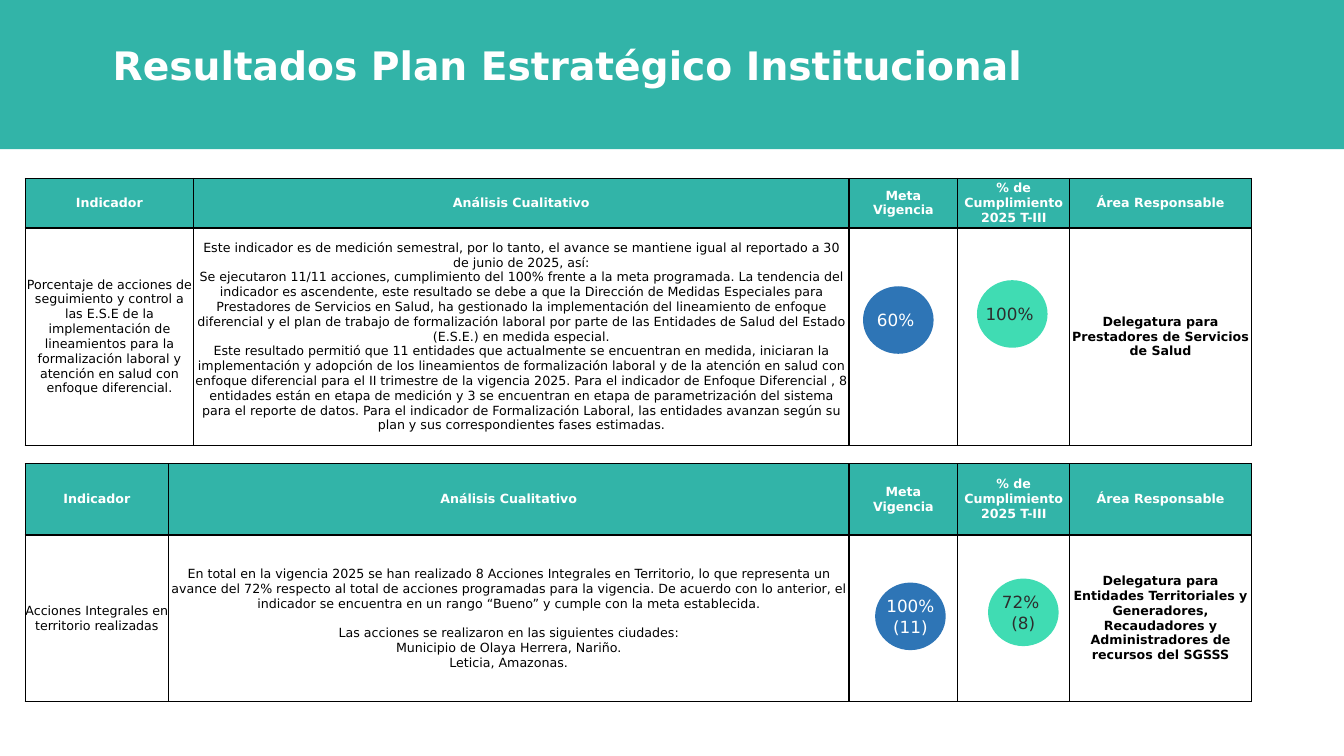
from lxml.etree import SubElement
from pptx import Presentation
from pptx.dml.color import RGBColor as Rgb
from pptx.enum.shapes import MSO_SHAPE as Kind
from pptx.enum.text import MSO_ANCHOR as Anchor, MSO_AUTO_SIZE as Fit, PP_ALIGN as Align
from pptx.oxml.ns import qn
from pptx.util import Inches, Pt

FONT = "DejaVu Sans"
HUE = {"teal": "32B4A8", "blue": "2E75B6", "mint": "40DCB3",
       "white": "FFFFFF", "black": "000000", "ink": "2D2D2D"}
TITLE = "Resultados Plan Estratégico Institucional"
HEAD = ["Indicador", "Análisis Cualitativo", "Meta\vVigencia",
        "% de Cumplimiento 2025 T-III", "Área Responsable"]
LEFT, WIDTH = 0.25, 12.16
TAIL = [1.08, 1.11, 1.8]
DOT = (0.7, 0.67)

PLANS = [
    {"top": 1.77, "first": 1.67, "rows": [0.49, 2.16], "gap": None,
     "name": "Porcentaje de acciones de seguimiento y control a las E.S.E de la implementación de lineamientos para la formalización laboral y atención en salud con enfoque diferencial.",
     "notes": [
         "Este indicador es de medición semestral, por lo tanto, el avance se mantiene igual al reportado a 30 de junio de 2025, así:",
         "Se ejecutaron 11/11 acciones, cumplimiento del 100% frente a la meta programada. La tendencia del indicador es ascendente, este resultado se debe a que la Dirección de Medidas Especiales para Prestadores de Servicios en Salud, ha gestionado la implementación del lineamiento de enfoque diferencial y el plan de trabajo de formalización laboral por parte de las Entidades de Salud del Estado (E.S.E.) en medida especial.",
         "Este resultado permitió que 11 entidades que actualmente se encuentran en medida, iniciaran la implementación y adopción de los lineamientos de formalización laboral y de la atención en salud con enfoque diferencial para el II trimestre de la vigencia 2025. Para el indicador de Enfoque Diferencial , 8 entidades están en etapa de medición y 3 se encuentran en etapa de parametrización del sistema para el reporte de datos. Para el indicador de Formalización Laboral, las entidades avanzan según su plan y sus correspondientes fases estimadas."],
     "area": "Delegatura para Prestadores de Servicios de Salud",
     "dots": [("60% ", 8.56, 2.84), ("100% ", 9.69, 2.78)]},
    {"top": 4.6, "first": 1.42, "rows": [0.71, 1.65], "gap": 1,
     "name": "Acciones Integrales en territorio realizadas",
     "notes": [
         "En total en la vigencia 2025 se han realizado 8 Acciones Integrales en Territorio, lo que representa un avance del 72% respecto al total de acciones programadas para la vigencia. De acuerdo con lo anterior, el indicador se encuentra en un rango “Bueno” y cumple con la meta establecida.",
         "Las acciones se realizaron en las siguientes ciudades:",
         "Municipio de Olaya Herrera, Nariño.",
         "Leticia, Amazonas."],
     "area": "Delegatura para Entidades Territoriales y Generadores, Recaudadores y Administradores de recursos del SGSSS",
     "dots": [("100%\n(11)", 8.68, 5.78), ("72% \n(8)", 9.8, 5.74)]},
]
DOT_HUES = [("blue", "white"), ("mint", "ink")]


def paint(fill, hue):
    fill.solid()
    fill.fore_color.rgb = Rgb.from_string(HUE[hue])


def write(frame, text, size, hue, bold=False):
    frame.text = text
    for para in frame.paragraphs:
        para.alignment = Align.CENTER
        for run in para.runs:
            font = run.font
            font.name, font.size, font.bold = FONT, Pt(size), bold
            font.color.rgb = Rgb.from_string(HUE[hue])


def add_form(slide, kind, box, hue):
    form = slide.shapes.add_shape(kind, *map(Inches, box))
    form.shadow.inherit = False
    paint(form.fill, hue)
    form.line.fill.background()
    return form


def edge(cell, base):
    props = cell._tc.get_or_add_tcPr()
    for side, width in (("L", 1), ("R", 1), ("T", 1), ("B", base)):
        line = SubElement(props, qn("a:ln" + side), w=str(Pt(width)))
        fill = SubElement(line, qn("a:solidFill"))
        SubElement(fill, qn("a:srgbClr"), val=HUE["black"])


def add_plan(slide, plan):
    cols = [plan["first"], WIDTH - plan["first"] - sum(TAIL), *TAIL]
    rows = plan["rows"]
    box = (LEFT, plan["top"], WIDTH, sum(rows))
    grid = slide.shapes.add_table(len(rows), len(cols), *map(Inches, box)).table
    grid.horz_banding = False
    for col, width in zip(grid.columns, cols):
        col.width = Inches(width)
    body = [plan["name"], "\n".join(plan["notes"]), "", "", plan["area"]]
    for r, texts in enumerate([HEAD, body]):
        grid.rows[r].height = Inches(rows[r])
        for c, text in enumerate(texts):
            cell = grid.cell(r, c)
            cell.vertical_anchor = Anchor.MIDDLE
            cell.margin_left = cell.margin_right = 0
            cell.margin_top = cell.margin_bottom = 0
            edge(cell, 1 if r else 2)
            if r:
                cell.fill.background()
            else:
                paint(cell.fill, "teal")
            write(cell.text_frame, text, 9, "black" if r else "white", r == 0 or c == 4)
    if plan["gap"]:
        grid.cell(1, 1).text_frame.paragraphs[plan["gap"]].space_before = Pt(10.5)


def add_dot(slide, dot, hues):
    text, left, top = dot
    form = add_form(slide, Kind.OVAL, (left, top, *DOT), hues[0])
    frame = form.text_frame
    frame.margin_left = frame.margin_right = 0
    frame.margin_top = frame.margin_bottom = 0
    frame.word_wrap = False
    frame.vertical_anchor = Anchor.MIDDLE
    write(frame, text, 12, hues[1])


def main():
    deck = Presentation()
    deck.slide_width, deck.slide_height = Inches(13.33), Inches(7.5)
    slide = deck.slides.add_slide(deck.slide_layouts[6])
    add_form(slide, Kind.RECTANGLE, (0, 0, 13.33, 1.48), "teal")
    frame = slide.shapes.add_textbox(*map(Inches, (1, 0.36, 9.25, 0.57))).text_frame
    frame.word_wrap = True
    frame.auto_size = Fit.SHAPE_TO_FIT_TEXT
    write(frame, TITLE, 28, "white", True)
    for plan in PLANS:
        add_plan(slide, plan)
        for dot, hues in zip(plan["dots"], DOT_HUES):
            add_dot(slide, dot, hues)
    deck.save("out.pptx")


if __name__ == "__main__":
    main()
